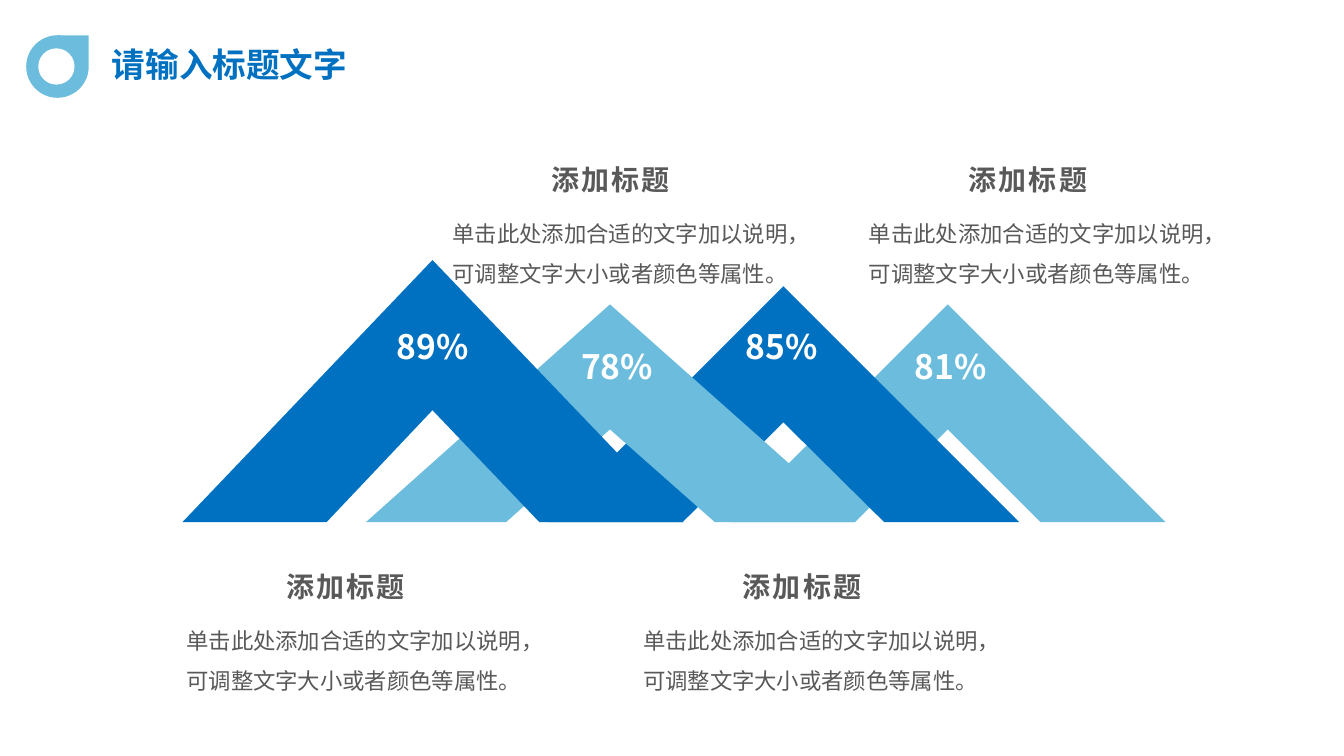
import dataclasses
import typing

import lxml.etree
import pptx
import pptx.dml.color
import pptx.enum.shapes
import pptx.enum.text
import pptx.oxml.ns
import pptx.util

PX = 9144
WIDE, HIGH = 1333, 750
BASE = 518
GAP = 44
HEAD = "添加标题"
BODY = "单击此处添加合适的文字加以说明，可调整文字大小或者颜色等属性。"

Align = pptx.enum.text.PP_ALIGN
Kind = pptx.enum.shapes.MSO_SHAPE
Color = pptx.dml.color.RGBColor


@dataclasses.dataclass(frozen=True)
class Theme:
    font: str = "Noto Sans CJK SC"
    dark: Color = Color(0x00, 0x70, 0xC0)
    light: Color = Color(0x6C, 0xBC, 0xDD)
    white: Color = Color(0xFF, 0xFF, 0xFF)
    gray: Color = Color(0x59, 0x59, 0x59)
    large: int = 24
    head: int = 20
    body: int = 16
    track: int = 150


THEME = Theme()


@dataclasses.dataclass(frozen=True)
class Style:
    size: int
    color: Color
    bold: bool = False
    align: Align = Align.LEFT
    lines: float = 1.0
    track: int = 0
    wrap: bool = True


TITLE = Style(THEME.large, THEME.dark, bold=True)
VALUE = Style(THEME.large, THEME.white, bold=True, align=Align.CENTER)
LABEL = Style(THEME.head, THEME.gray, bold=True, align=Align.CENTER,
              track=THEME.track, wrap=False)
PROSE = Style(THEME.body, THEME.gray, lines=1.5)


class Box(typing.NamedTuple):
    left: int
    top: int
    width: int
    height: int

    def emu(self) -> list[int]:
        return [side * PX for side in self]


class Peak(typing.NamedTuple):
    left: int
    right: int
    top: int
    notch: int
    foot: int
    color: Color
    value: str
    spot: Box


class Note(typing.NamedTuple):
    left: int
    top: int
    width: int
    head: int


PEAKS = [
    Peak(724, 1156, 302, 426, 124, THEME.light, "81%", Box(894, 338, 98, 50)),
    Peak(543, 1011, 284, 419, 134, THEME.dark, "85%", Box(726, 318, 98, 50)),
    Peak(363, 848, 302, 426, 139, THEME.light, "78%", Box(563, 338, 98, 50)),
    Peak(181, 678, 258, 407, 143, THEME.dark, "89%", Box(380, 318, 98, 50)),
]
NOTES = [
    Note(175, 560, 368, 272),
    Note(439, 156, 358, 535),
    Note(628, 560, 364, 725),
    Note(852, 156, 360, 949),
]


def write(shape, text: str, style: Style) -> None:
    frame = shape.text_frame
    frame.word_wrap = style.wrap
    frame.auto_size = pptx.enum.text.MSO_AUTO_SIZE.SHAPE_TO_FIT_TEXT
    frame.vertical_anchor = pptx.enum.text.MSO_ANCHOR.TOP
    para = frame.paragraphs[0]
    para.alignment = style.align
    para.line_spacing = style.lines
    run = para.add_run()
    run.text = text
    font = run.font
    font.size = pptx.util.Pt(style.size)
    font.bold = style.bold
    font.color.rgb = style.color
    font.name = THEME.font
    props = run._r.get_or_add_rPr()
    if style.track:
        props.set("spc", str(style.track))
    east = lxml.etree.SubElement(props, pptx.oxml.ns.qn("a:ea"))
    east.set("typeface", THEME.font)


def label(slide, box: Box, text: str, style: Style) -> None:
    write(slide.shapes.add_textbox(*box.emu()), text, style)


def paint(shape, color: Color) -> None:
    shape.shadow.inherit = False
    shape.fill.solid()
    shape.fill.fore_color.rgb = color
    shape.line.fill.background()


def draw_peak(slide, peak: Peak) -> None:
    mid = (peak.left + peak.right) // 2
    pen = slide.shapes.build_freeform(mid, peak.top, scale=PX)
    pen.add_line_segments([
        (peak.right, BASE),
        (peak.right - peak.foot, BASE),
        (mid, peak.notch),
        (peak.left + peak.foot, BASE),
        (peak.left, BASE),
    ])
    paint(pen.convert_to_shape(), peak.color)


def draw_note(slide, note: Note) -> None:
    label(slide, Box(note.left, note.top + GAP, note.width, 86), BODY, PROSE)
    label(slide, Box(note.head, note.top, 141, GAP), HEAD, LABEL)


def draw_title(slide) -> None:
    drop = slide.shapes.add_shape(Kind.TEAR, *Box(26, 35, 62, 62).emu())
    paint(drop, THEME.light)
    hole = slide.shapes.add_shape(Kind.OVAL, *Box(38, 48, 36, 36).emu())
    paint(hole, THEME.white)
    title = slide.shapes.title
    title.left, title.top, title.width, title.height = Box(101, 39, 261, 50).emu()
    write(title, "请输入标题文字", TITLE)


def main() -> None:
    deck = pptx.Presentation()
    deck.slide_width, deck.slide_height = WIDE * PX, HIGH * PX
    slide = deck.slides.add_slide(deck.slide_layouts[5])
    for peak in PEAKS:
        draw_peak(slide, peak)
    for peak in PEAKS:
        label(slide, peak.spot, peak.value, VALUE)
    for note in NOTES:
        draw_note(slide, note)
    draw_title(slide)
    deck.save("out.pptx")


if __name__ == "__main__":
    main()
